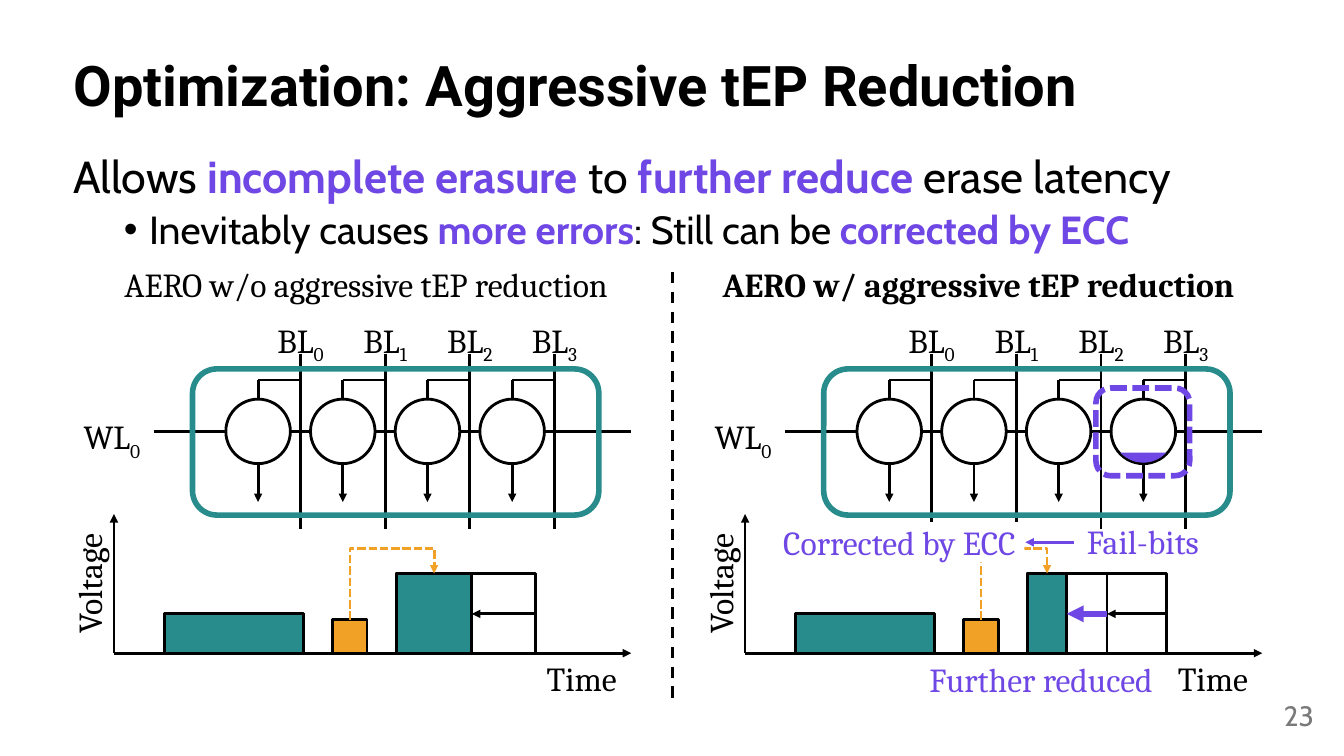
import math
from dataclasses import dataclass
from typing import NamedTuple

from lxml import etree
from pptx import Presentation
from pptx.dml.color import RGBColor
from pptx.enum.dml import MSO_LINE
from pptx.enum.shapes import MSO_CONNECTOR, MSO_SHAPE
from pptx.enum.text import MSO_ANCHOR, PP_ALIGN
from pptx.oxml.ns import qn
from pptx.util import Inches, Pt

RECTANGLE, ROUNDED, OVAL = MSO_SHAPE.RECTANGLE, MSO_SHAPE.ROUNDED_RECTANGLE, MSO_SHAPE.OVAL
STRAIGHT, ELBOW = MSO_CONNECTOR.STRAIGHT, MSO_CONNECTOR.ELBOW
DASH, SHORT_DASH = MSO_LINE.DASH, MSO_LINE.SQUARE_DOT
LEFT, CENTER, RIGHT = PP_ALIGN.LEFT, PP_ALIGN.CENTER, PP_ALIGN.RIGHT
TOP, MIDDLE = MSO_ANCHOR.TOP, MSO_ANCHOR.MIDDLE

COLORS = {"black": "000000", "white": "FFFFFF", "teal": "298C8C",
          "orange": "F1A226", "purple": "6F47E5", "gray": "797979"}

FORMATS = {
    "title": {"name": "Roboto", "size": Pt(40), "bold": True},
    "body": {"name": "Cabin", "size": Pt(32), "bold": False},
    "body strong": {"name": "Cabin", "size": Pt(32), "bold": True},
    "bullet": {"name": "Cabin", "size": Pt(28), "bold": False},
    "bullet strong": {"name": "Cabin", "size": Pt(28), "bold": True},
    "number": {"name": "Cabin", "size": Pt(20), "bold": False},
    "label": {"name": "Cambria", "size": Pt(24), "bold": False},
    "label strong": {"name": "Cambria", "size": Pt(24), "bold": True},
}


class Span(NamedTuple):
    text: str
    style: str = "label"
    color: str = "black"
    subscript: bool = False


class Stroke(NamedTuple):
    color: str = "black"
    width: float = 2
    dash: MSO_LINE | None = None


@dataclass
class Box:
    left: float
    top: float
    width: float
    height: float

    def lengths(self):
        return [Inches(value) for value in (self.left, self.top, self.width, self.height)]


@dataclass
class Panel:
    offset: float
    heading: Span
    heading_box: Box
    pulse_width: float   # shortened erase pulse
    reduced_width: float  # where the first reduction ends


PANELS = [
    Panel(0, Span("AERO w/o aggressive tEP reduction"), Box(0.97, 2.57, 5.32, 0.5), 0.75, 0.75),
    Panel(6.26, Span("AERO w/ aggressive tEP reduction", "label strong"),
          Box(6.98, 2.57, 5.45, 0.5), 0.39, 0.79),
]
CELL_COUNT, CELL_PITCH, CELL_SIZE = 4, 0.84, 0.64
WORD_LINE_Y, TIME_AXIS_Y = 4.28, 6.48
PULSE_LEFT, PULSE_TOP, PULSE_WIDTH, PULSE_HEIGHT = 3.93, 5.69, 1.38, 0.79


def rgb(color: str) -> RGBColor:
    return RGBColor.from_string(COLORS[color])


def set_stroke(line, stroke: Stroke) -> None:
    line.color.rgb = rgb(stroke.color)
    line.width = Pt(stroke.width)
    if stroke.dash is not None:
        line.dash_style = stroke.dash


def write_spans(paragraph, spans: list[Span]) -> None:
    for span in spans:
        run = paragraph.add_run()
        run.text = span.text
        for attribute, value in FORMATS[span.style].items():
            setattr(run.font, attribute, value)
        run.font.color.rgb = rgb(span.color)
        if span.subscript:
            run._r.get_or_add_rPr().set("baseline", "-25000")


def add_text(slide, box: Box, spans: list[Span], align=CENTER, anchor=MIDDLE, wrap=False):
    shape = slide.shapes.add_textbox(*box.lengths())
    frame = shape.text_frame
    frame.word_wrap = wrap
    frame.vertical_anchor = anchor
    frame.paragraphs[0].alignment = align
    write_spans(frame.paragraphs[0], spans)
    return shape


def add_box(slide, kind, box: Box, fill: str | None = None, stroke: Stroke | None = Stroke()):
    shape = slide.shapes.add_shape(kind, *box.lengths())
    paint(shape, fill, stroke)
    return shape


def paint(shape, fill: str | None, stroke: Stroke | None) -> None:
    shape.shadow.inherit = False
    if fill:
        shape.fill.solid()
        shape.fill.fore_color.rgb = rgb(fill)
    else:
        shape.fill.background()
    if stroke:
        set_stroke(shape.line, stroke)
    else:
        shape.line.fill.background()


def add_line(slide, start, end, stroke: Stroke = Stroke(), arrow=False, kind=STRAIGHT):
    points = [Inches(value) for value in (*start, *end)]
    connector = slide.shapes.add_connector(kind, *points)
    set_stroke(connector.line, stroke)
    if arrow:
        etree.SubElement(connector.line._get_or_add_ln(), qn("a:tailEnd"), type="triangle")
    etree.SubElement(connector._element.spPr, qn("a:effectLst"))
    return connector


def add_feedback_arrow(slide, start, end, peak: float) -> None:
    """Elbow that rises to the peak and drops on the end point."""
    rise, run = start[1] - end[1], end[0] - start[0]
    middle_x, middle_y = (start[0] + end[0]) / 2, (start[1] + end[1]) / 2
    connector = add_line(slide, (middle_x + rise / 2, middle_y + run / 2),
                         (middle_x - rise / 2, middle_y - run / 2),
                         Stroke("orange", 2, SHORT_DASH), True, ELBOW)
    properties = connector._element.spPr
    properties.find(qn("a:xfrm")).set("rot", "5400000")
    adjustments = properties.find(qn("a:prstGeom")).get_or_add_avLst()
    bend = round((start[1] - peak) / rise * 100000)
    etree.SubElement(adjustments, qn("a:gd"), name="adj1", fmla=f"val {bend}")


def add_residue(slide, center_x: float, center_y: float, radius: float, depth: float) -> None:
    """Filled circle segment below a horizontal chord."""
    first = math.asin(depth / radius)
    angles = [first + (math.pi - 2 * first) * step / 24 for step in range(25)]
    points = [(Inches(center_x + radius * math.cos(angle)),
               Inches(center_y + radius * math.sin(angle))) for angle in angles]
    builder = slide.shapes.build_freeform(*points[0])
    builder.add_line_segments(points[1:], close=True)
    paint(builder.convert_to_shape(), "purple", None)


def draw_panel(slide, panel: Panel) -> None:
    x = panel.offset
    add_text(slide, panel.heading_box, [panel.heading])

    # Voltage over time
    axis_x, axis_end = x + 1.13, x + 6.26
    add_line(slide, (axis_x, TIME_AXIS_Y), (axis_x, 5.1), arrow=True)
    add_box(slide, RECTANGLE, Box(x + 1.63, 6.09, 1.38, 0.39), "teal")
    add_box(slide, RECTANGLE, Box(x + 3.3, 6.15, 0.34, 0.33), "orange")
    add_text(slide, Box(x + 0.25, 5.54, 1.26, 0.5), [Span("Voltage")]).rotation = 270
    add_text(slide, Box(x + 5.3, 6.48, 0.94, 0.5), [Span("Time")])
    add_line(slide, (axis_x, TIME_AXIS_Y), (axis_end, TIME_AXIS_Y), arrow=True)

    # Word line, bit lines and cells
    add_line(slide, (x + 1.53, WORD_LINE_Y), (axis_end, WORD_LINE_Y))
    add_text(slide, Box(x + 0.67, 4.08, 0.82, 0.5),
             [Span("WL"), Span("0", subscript=True)], RIGHT, TOP)
    for index in range(CELL_COUNT):
        cell_x = x + 2.56 + index * CELL_PITCH
        bit_line_x = cell_x + CELL_PITCH / 2
        add_line(slide, (cell_x, 3.77), (cell_x, 4.98), arrow=True)
        add_text(slide, Box(bit_line_x - 0.36, 3.12, 0.72, 0.5),
                 [Span("BL"), Span(str(index), subscript=True)], anchor=TOP)
        add_line(slide, (bit_line_x, 3.51), (bit_line_x, 5.25))
        add_line(slide, (cell_x, 3.77), (bit_line_x, 3.77))
        add_box(slide, OVAL, Box(cell_x - CELL_SIZE / 2, 3.96, CELL_SIZE, CELL_SIZE), "white")
    add_box(slide, ROUNDED, Box(x + 1.91, 3.66, 4.03, 1.45), stroke=Stroke("teal", 4))

    # Shortened erase pulse
    pulse_x = x + PULSE_LEFT
    for width, fill in ((panel.pulse_width, "teal"), (panel.reduced_width, None),
                        (PULSE_WIDTH, None)):
        add_box(slide, RECTANGLE, Box(pulse_x, PULSE_TOP, width, PULSE_HEIGHT), fill)
    add_line(slide, (pulse_x + PULSE_WIDTH, 6.09), (pulse_x + panel.reduced_width, 6.09),
             arrow=True)
    add_feedback_arrow(slide, (x + 3.47, 6.15),
                       (pulse_x + panel.pulse_width / 2, PULSE_TOP), 5.44)


def draw_fail_bits(slide) -> None:
    add_residue(slide, 11.34, WORD_LINE_Y, 0.31, 0.21)
    add_box(slide, ROUNDED, Box(10.87, 3.85, 0.93, 0.87), stroke=Stroke("purple", 4, SHORT_DASH))
    add_line(slide, (10.98, 6.09), (10.58, 6.09), Stroke("purple", 4), True)
    add_text(slide, Box(9.05, 6.49, 2.55, 0.5), [Span("Further reduced", color="purple")])
    add_text(slide, Box(10.65, 5.12, 1.37, 0.5), [Span("Fail-bits", color="purple")])
    add_line(slide, (10.65, 5.38), (10.17, 5.38), Stroke("purple"), True)
    corrected = add_box(slide, RECTANGLE, Box(7.68, 5.18, 2.48, 0.4), "white", None)
    frame = corrected.text_frame
    frame.word_wrap = False
    frame.vertical_anchor = MIDDLE
    for side in ("left", "top", "right", "bottom"):
        setattr(frame, f"margin_{side}", 0)
    frame.paragraphs[0].alignment = CENTER
    write_spans(frame.paragraphs[0], [Span("Corrected by ECC", color="purple")])


def draw_text(slide) -> None:
    title = add_text(slide, Box(0.63, 0.15, 12.08, 1.45),
                     [Span("Optimization: Aggressive tEP Reduction", "title")], LEFT, wrap=True)
    title.text_frame.paragraphs[0].line_spacing = 0.9
    body = add_text(slide, Box(0.63, 1.49, 12.08, 1.1), [
        Span("Allows ", "body"), Span("incomplete erasure ", "body strong", "purple"),
        Span("to ", "body"), Span("further reduce ", "body strong", "purple"),
        Span("erase latency", "body")], LEFT, TOP, True)
    body.text_frame.paragraphs[0].line_spacing = 0.9
    bullet = body.text_frame.add_paragraph()
    bullet.level = 1
    bullet.line_spacing = 0.9
    bullet.space_before = Pt(5)
    properties = bullet._p.get_or_add_pPr()
    properties.set("marL", str(Inches(0.75)))
    properties.set("indent", str(Inches(-0.25)))
    etree.SubElement(properties, qn("a:buFont"), typeface="Arial")
    etree.SubElement(properties, qn("a:buChar"), char="•")
    write_spans(bullet, [
        Span("Inevitably causes ", "bullet"), Span("more errors", "bullet strong", "purple"),
        Span(": Still can be ", "bullet"), Span("corrected by ECC", "bullet strong", "purple")])
    add_text(slide, Box(10.13, 6.9, 3, 0.4), [Span("23", "number", "gray")], RIGHT, wrap=True)


def main() -> None:
    presentation = Presentation()
    presentation.slide_width, presentation.slide_height = Inches(13.33), Inches(7.5)
    slide = presentation.slides.add_slide(presentation.slide_layouts[6])
    draw_text(slide)
    add_line(slide, (6.67, 2.7), (6.67, 6.95), Stroke(dash=DASH))
    for panel in PANELS:
        draw_panel(slide, panel)
    draw_fail_bits(slide)
    presentation.save("out.pptx")


if __name__ == "__main__":
    main()
